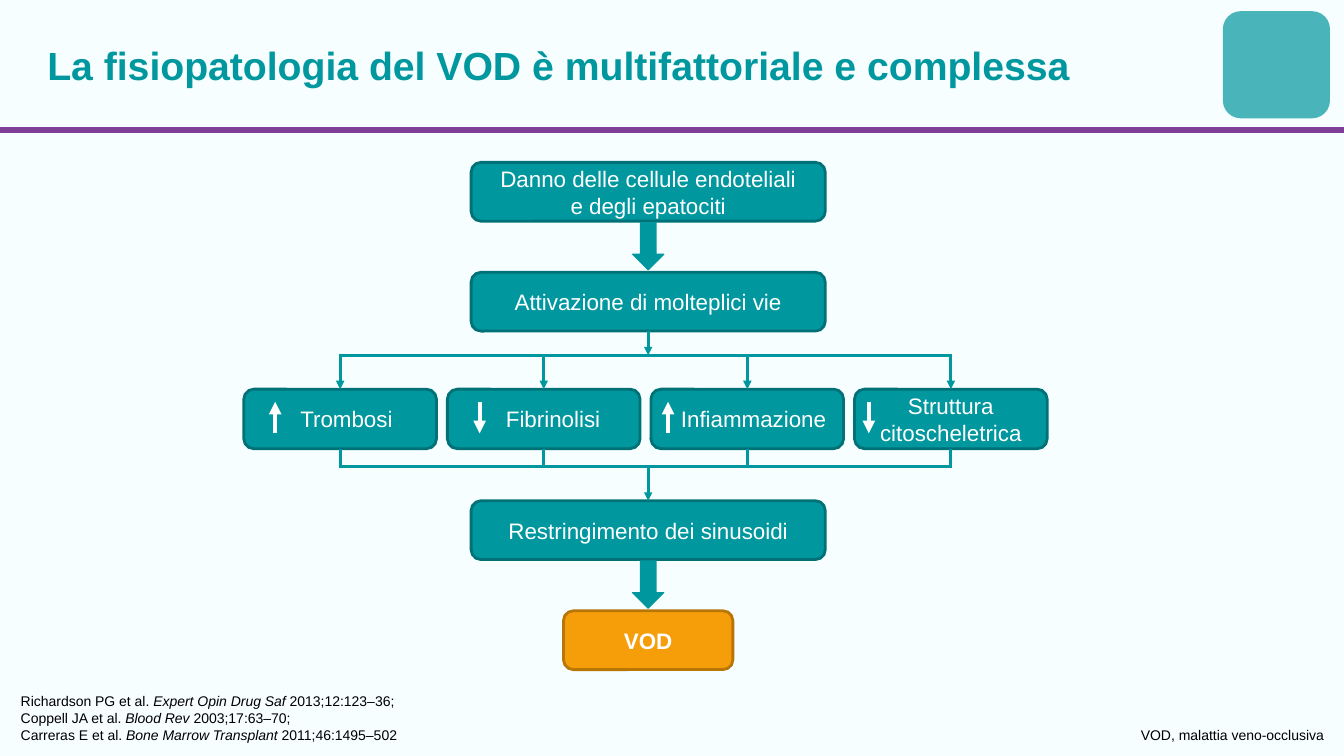
from lxml.etree import SubElement
from pptx import Presentation
from pptx.dml.color import RGBColor
from pptx.enum.shapes import MSO_CONNECTOR, MSO_SHAPE
from pptx.enum.text import MSO_ANCHOR, MSO_AUTO_SIZE, PP_ALIGN
from pptx.oxml.ns import qn
from pptx.util import Pt

TEAL, DARK, WHITE, BLACK = "00979E", "007176", "FFFFFF", "000000"
AMBER, BROWN, PURPLE, PALE = "F59E09", "B87607", "7F3F98", "F7FEFF"
TOP, BOTTOM = 0, 2


def color(code):
    return RGBColor.from_string(code)


class Deck:
    def __init__(self, width, height):
        self.prs = Presentation()
        self.prs.slide_width, self.prs.slide_height = Pt(width), Pt(height)
        self.font = "Arial"

    def start(self, back):
        self.slide = self.prs.slides.add_slide(self.prs.slide_layouts[5])
        fill = self.slide.background.fill
        fill.solid()
        fill.fore_color.rgb = color(back)

    def style(self, para, size, code, bold=False, align=PP_ALIGN.LEFT):
        para.alignment = align
        for run in para.runs:
            run.font.name, run.font.size = self.font, Pt(size)
            run.font.bold = bold
            run.font.color.rgb = color(code)

    def title(self, text, x, y, w, h):
        box = self.slide.shapes.title
        box.left, box.top, box.width, box.height = Pt(x), Pt(y), Pt(w), Pt(h)
        frame = box.text_frame
        frame.text = text
        frame.auto_size = MSO_AUTO_SIZE.NONE
        frame.vertical_anchor = MSO_ANCHOR.MIDDLE
        self.style(frame.paragraphs[0], 28, TEAL, bold=True)

    def shape(self, kind, x, y, w, h, fill, edge=None, weight=2, alpha=None):
        """Add a filled preset shape; alpha is its opacity in percent."""
        item = self.slide.shapes.add_shape(kind, Pt(x), Pt(y), Pt(w), Pt(h))
        item.shadow.inherit = False
        item.fill.solid()
        item.fill.fore_color.rgb = color(fill)
        if alpha:
            tint = next(item._element.spPr.iter(qn("a:srgbClr")))
            SubElement(tint, qn("a:alpha")).set("val", str(alpha * 1000))
        if edge:
            item.line.color.rgb = color(edge)
            item.line.width = Pt(weight)
        else:
            item.line.fill.background()
        return item

    def box(self, text, x, y, w, h, fill=TEAL, edge=DARK, bold=False, indent=0):
        """Add a rounded box whose centred text is pushed right by an indent."""
        item = self.shape(MSO_SHAPE.ROUNDED_RECTANGLE, x, y, w, h, fill, edge)
        frame = item.text_frame
        frame.text = text
        frame.word_wrap = True
        frame.vertical_anchor = MSO_ANCHOR.MIDDLE
        frame.margin_left = Pt(7.2 + indent)
        self.style(frame.paragraphs[0], 16, WHITE, bold, PP_ALIGN.CENTER)
        return item

    def line(self, x1, y1, x2, y2, code=TEAL, weight=2, head=False,
             start=None, end=None):
        """Draw a line, joined to the bottom of start or the top of end."""
        item = self.slide.shapes.add_connector(
            MSO_CONNECTOR.STRAIGHT, Pt(x1), Pt(y1), Pt(x2), Pt(y2))
        item.line.color.rgb = color(code)
        item.line.width = Pt(weight)
        if head:
            SubElement(item.line._get_or_add_ln(), qn("a:tailEnd")).set("type", "triangle")
        SubElement(item._element.spPr, qn("a:effectLst"))
        if start:
            item.begin_connect(start, BOTTOM)
        if end:
            item.end_connect(end, TOP)

    def note(self, rows, x, y, w, h, align=PP_ALIGN.LEFT):
        """Add small print; every second part of a row is italic."""
        frame = self.slide.shapes.add_textbox(Pt(x), Pt(y), Pt(w), Pt(h)).text_frame
        frame.word_wrap = True
        frame.vertical_anchor = MSO_ANCHOR.BOTTOM
        for i, row in enumerate(rows):
            para = frame.add_paragraph() if i else frame.paragraphs[0]
            for j, part in enumerate(row):
                run = para.add_run()
                run.text = part
                run.font.italic = j % 2 == 1
            self.style(para, 10, BLACK, align=align)


def main():
    deck = Deck(960, 540)
    deck.start(PALE)
    deck.shape(MSO_SHAPE.ROUNDED_RECTANGLE, 873.5, 8, 76.5, 76.5, TEAL, alpha=70)
    deck.line(0, 92.9, 960, 92.9, PURPLE, 4.5)
    deck.title("La fisiopatologia del VOD è multifattoriale e complessa",
               26.6, 6.5, 847.4, 79.2)

    mid, wide, high = 463, 253, 42
    left = mid - wide / 2
    damage, active, narrow, final = 116, 194.5, 357.7, 436.3
    deck.box("Danno delle cellule endoteliali\ve degli epatociti",
             left, damage, wide, high)
    source = deck.box("Attivazione di molteplici vie", left, active, wide, high)
    target = deck.box("Restringimento dei sinusoidi", left, narrow, wide, high)
    deck.box("VOD", mid - 60.5, final, 121, high, AMBER, BROWN, bold=True)
    for y in (damage, narrow):
        deck.shape(MSO_SHAPE.DOWN_ARROW, mid - 11.2, y + high + 1, 22.4, 33.8,
                   TEAL, TEAL, 0.75)

    first, step, span, row = 174.2, 145.4, 137.6, 278
    split, merge = 253.8, 333.3
    # Text, text indent, arrow offset, whether the factor rises
    factors = [
        ("Trombosi", 8.9, 22.4, True),
        ("Fibrinolisi", 13.3, 23, False),
        ("Infiammazione", 8.9, 12.2, True),
        ("Struttura citoscheletrica", 0, 10.2, False),
    ]
    for i, (text, indent, shift, rise) in enumerate(factors):
        x = first + i * step
        axis = x + span / 2
        item = deck.box(text, x, row, span, 42.5, indent=indent)
        deck.line(axis, split, axis, row, head=True, end=item)
        deck.line(axis, row + 42.5, axis, merge, start=item)
        ends = (309.5, 287) if rise else (287, 309.5)
        deck.line(x + shift, ends[0], x + shift, ends[1], WHITE, 3, head=True)
    near = first + span / 2
    for y in (split, merge):
        deck.line(near - 1, y, near + 3 * step + 1, y)
    deck.line(mid, active + high, mid, split, head=True, start=source)
    deck.line(mid, merge, mid, narrow, head=True, end=target)

    deck.note([
        ("Richardson PG et al. ", "Expert Opin Drug Saf ", "2013;12:123–36;"),
        ("Coppell JA et al. ", "Blood Rev ", "2003;17:63–70;"),
        ("Carreras E et al. ", "Bone Marrow Transplant ", "2011;46:1495–502"),
    ], 7.7, 490.3, 574.6, 43.9)
    deck.note([("VOD, malattia veno-occlusiva",)], 378, 511.2, 574.6, 23,
              PP_ALIGN.RIGHT)
    deck.prs.save("out.pptx")


if __name__ == "__main__":
    main()
